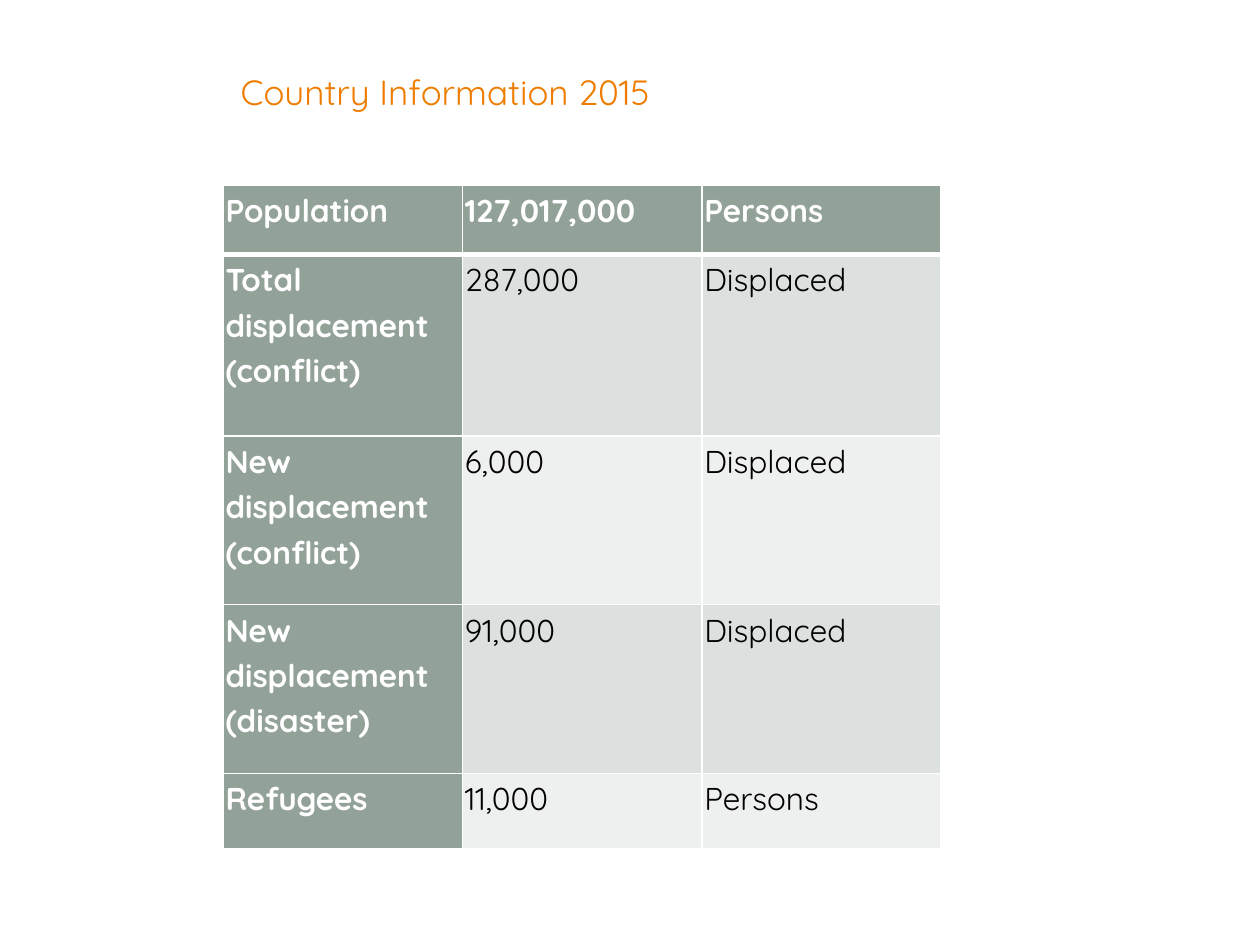
from dataclasses import dataclass

from lxml import etree
from pptx import Presentation
from pptx import util as u
from pptx.dml.color import RGBColor
from pptx.enum import text
from pptx.oxml import ns


@dataclass(frozen=True)
class Theme:
    font: str = "Quicksand"
    head: int = 20
    body: int = 18
    accent: str = "EE7C00"
    white: str = "FFFFFF"
    black: str = "000000"
    sage: str = "93A299"
    bands: tuple = ("DCE0DE", "EEF0EF")


THEME = Theme()
ROWS = [
    ("Population", "127,017,000", "Persons"),
    ("Total displacement (conflict)", "287,000", "Displaced"),
    ("New displacement (conflict)", "6,000", "Displaced"),
    ("New displacement (disaster)", "91,000", "Displaced"),
    ("Refugees", "11,000", "Persons"),
]
HEIGHTS = (0.55, 1.44, 1.34, 1.34, 0.6)


def paint(fill, tint):
    fill.solid()
    fill.fore_color.rgb = RGBColor.from_string(tint)


def style(para, size, tint, bold=False):
    font = para.font
    font.name, font.size, font.bold = THEME.font, u.Pt(size), bold
    font.color.rgb = RGBColor.from_string(tint)


def edge(cell, base):
    """Draw white cell borders; base is the width of the lower one."""
    props = cell._tc.get_or_add_tcPr()
    widths = {"a:lnL": 1, "a:lnR": 1, "a:lnT": 1, "a:lnB": base}
    for i, (tag, width) in enumerate(widths.items()):
        line = etree.Element(ns.qn(tag), w=str(u.Pt(width)))
        fill = etree.SubElement(line, ns.qn("a:solidFill"))
        etree.SubElement(fill, ns.qn("a:srgbClr"), val=THEME.white)
        props.insert(i, line)


def add_title(slide, box, words):
    title = slide.shapes.title
    title.left, title.top, title.width, title.height = map(u.Inches, box)
    paint(title.fill, THEME.white)
    frame = title.text_frame
    frame.text = words
    frame.word_wrap = True
    frame.auto_size = text.MSO_AUTO_SIZE.NONE
    frame.vertical_anchor = text.MSO_ANCHOR.TOP
    frame.margin_left = frame.margin_right = u.Inches(0.1)
    frame.margin_top = frame.margin_bottom = u.Inches(0.21)
    para = frame.paragraphs[0]
    para.alignment = text.PP_ALIGN.LEFT
    style(para, THEME.head, THEME.accent)


def fill_cell(cell, words, row, col):
    head = row == 0 or col == 0
    paint(cell.fill, THEME.sage if head else THEME.bands[(row - 1) % 2])
    edge(cell, 3 if row == 0 else 1)
    cell.margin_left = cell.margin_right = u.Inches(0.02)
    cell.margin_top = cell.margin_bottom = 0
    cell.text = words
    para = cell.text_frame.paragraphs[0]
    para.alignment = text.PP_ALIGN.JUSTIFY
    para.line_spacing = 1.15
    para.space_before = u.Pt(24)
    style(para, THEME.body, THEME.white if head else THEME.black, head)


def add_grid(slide, box, rows, heights):
    frame = slide.shapes.add_table(len(rows), len(rows[0]), *map(u.Inches, box))
    grid = frame.table
    grid.first_col = True
    for col in grid.columns:
        col.width = u.Inches(box[2] / len(rows[0]))
    for r, (words, height) in enumerate(zip(rows, heights)):
        grid.rows[r].height = u.Inches(height)
        for c, word in enumerate(words):
            fill_cell(grid.cell(r, c), word, r, c)


def main():
    deck = Presentation()
    deck.slide_width, deck.slide_height = u.Inches(10), u.Inches(7.5)
    slide = deck.slides.add_slide(deck.slide_layouts[5])
    paint(slide.background.fill, THEME.white)
    # Facts table, then the heading above it
    add_grid(slide, (1.77, 1.47, 5.7, sum(HEIGHTS)), ROWS, HEIGHTS)
    add_title(slide, (1.81, 0.35, 5.67, 1.09), "Country Information 2015")
    deck.save("out.pptx")


if __name__ == "__main__":
    main()
